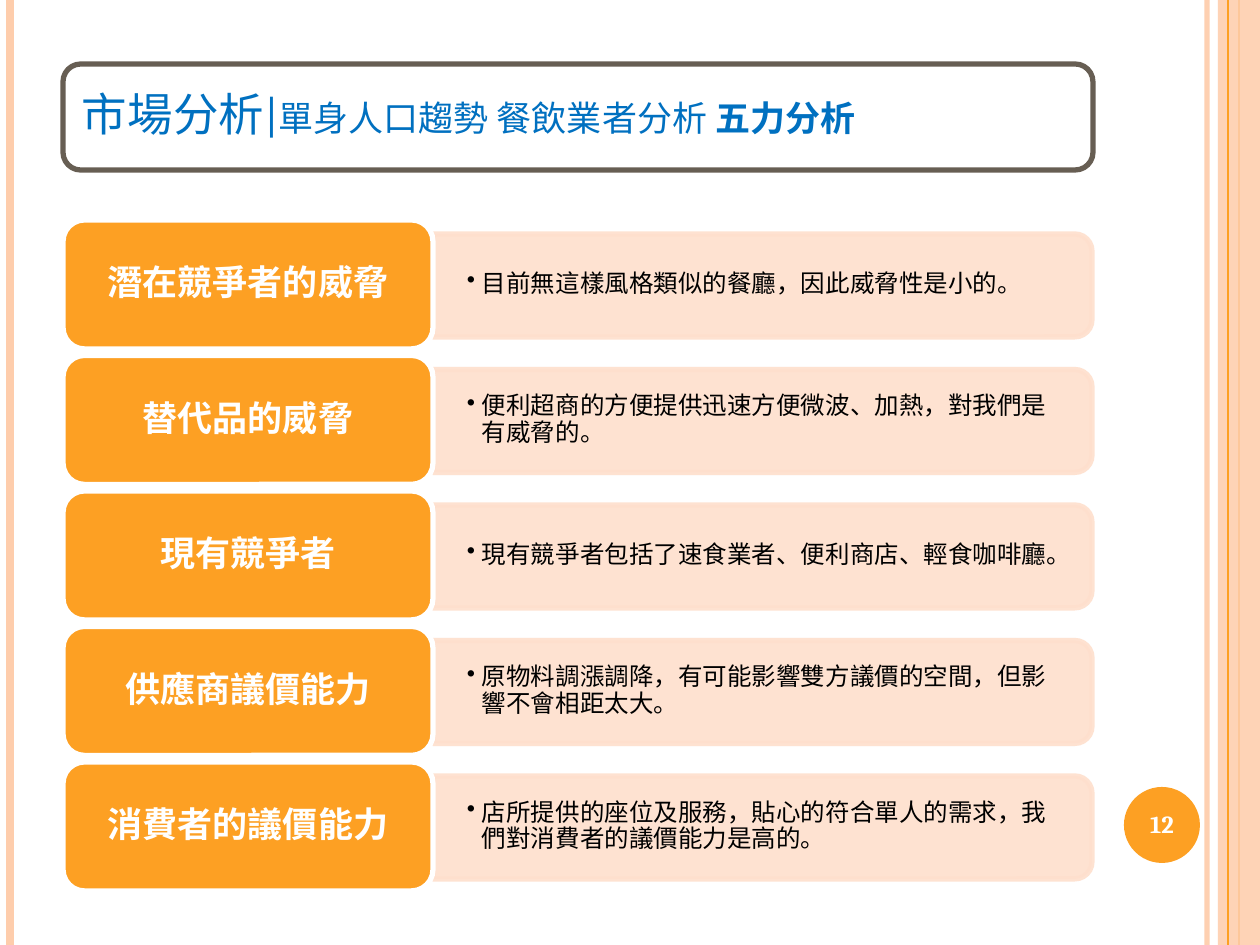
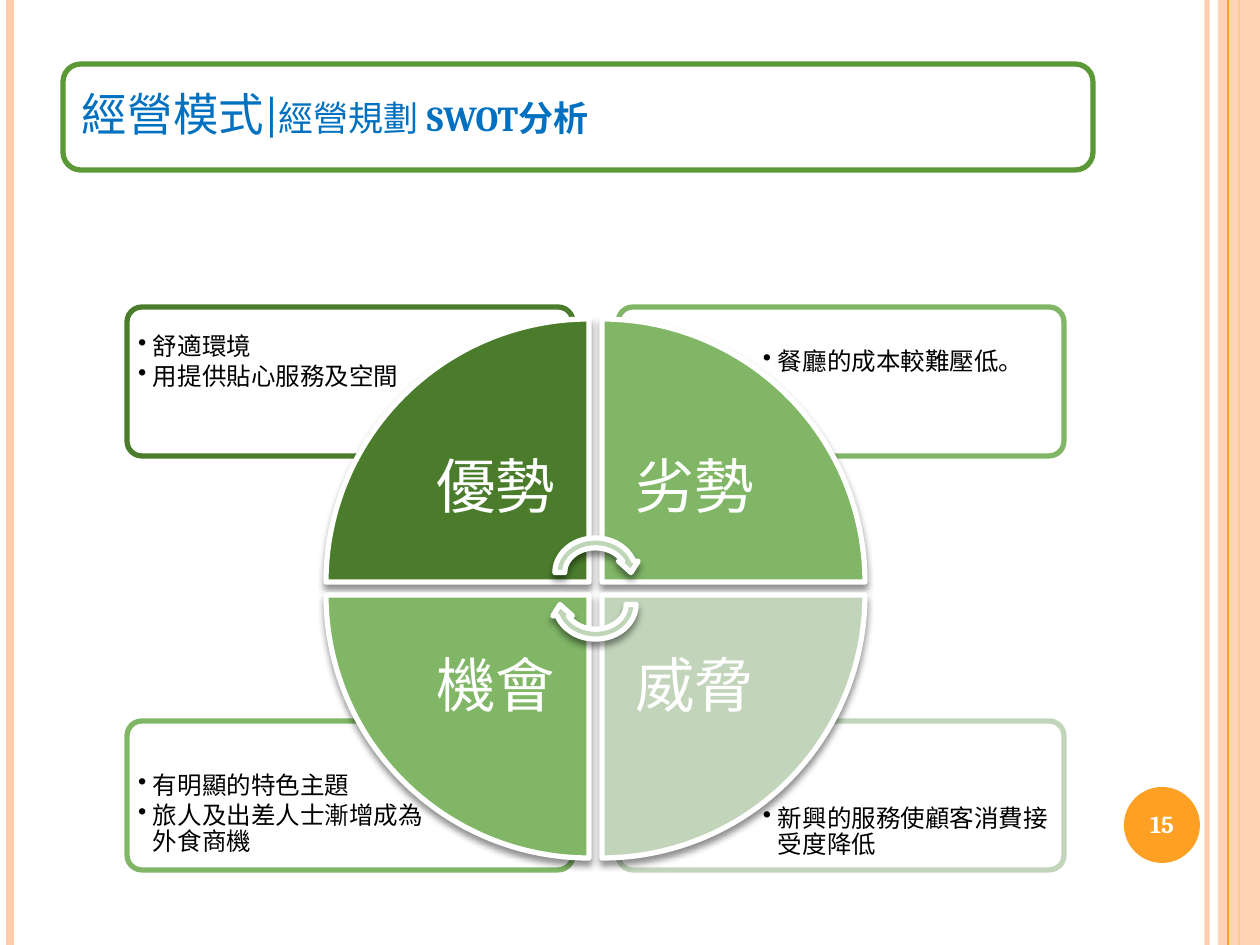
from dataclasses import dataclass
from lxml.etree import SubElement
from pptx import Presentation
from pptx.dml.color import RGBColor
from pptx.enum.shapes import MSO_CONNECTOR, MSO_SHAPE
from pptx.enum.text import MSO_ANCHOR, MSO_AUTO_SIZE, PP_ALIGN
from pptx.oxml.ns import qn
from pptx.util import Pt


@dataclass(frozen=True)
class Theme:
    font: str = "Cambria"
    white: str = "FFFFFF"
    black: str = "000000"
    blue: str = "0070C0"
    orange: str = "FDA023"
    peach: str = "FECDAC"
    pale: str = "FEDFCD"
    brown: str = "675E53"
    leaf: str = "5B9836"
    dark: str = "4A7C2C"
    green: str = "80B666"
    mist: str = "C2D5BB"
    arrow: str = "BFD5B7"
    head: int = 26
    sub: int = 20
    body: int = 14
    label: int = 34
    edge: int = 3


T = Theme()
PX = 914400 / 126
WIDE, HIGH = 1260, 945

FORCES = {
    "page": "12",
    "frame": T.brown,
    "title": [("市場分析|", T.head, False),
              ("單身人口趨勢 餐飲業者分析 ", T.sub, False),
              ("五力分析", T.sub, True)],
    "rows": [
        ("潛在競爭者的威脅", "目前無這樣風格類似的餐廳，因此威脅性是小的。"),
        ("替代品的威脅", "便利超商的方便提供迅速方便微波、加熱，對我們是有威脅的。"),
        ("現有競爭者", "現有競爭者包括了速食業者、便利商店、輕食咖啡廳。"),
        ("供應商議價能力", "原物料調漲調降，有可能影響雙方議價的空間，但影響不會相距太大。"),
        ("消費者的議價能力",
         "店所提供的座位及服務，貼心的符合單人的需求，我們對消費者的議價能力是高的。"),
    ],
}

# Each part: label, colour, column, row, turn, anchor, points
SWOT = {
    "page": "15",
    "frame": T.leaf,
    "title": [("經營模式|", T.head, False),
              ("經營規劃 ", T.sub, False),
              ("SWOT分析", T.sub, True)],
    "parts": [
        ("優勢", T.dark, 0, 0, 0, MSO_ANCHOR.MIDDLE,
         ["舒適環境", "用提供貼心服務及空間"]),
        ("劣勢", T.green, 1, 0, 90, MSO_ANCHOR.MIDDLE, ["餐廳的成本較難壓低。"]),
        ("威脅", T.mist, 1, 1, 180, MSO_ANCHOR.BOTTOM,
         ["新興的服務使顧客消費接受度降低"]),
        ("機會", T.green, 0, 1, 270, MSO_ANCHOR.MIDDLE,
         ["有明顯的特色主題", "旅人及出差人士漸增成為外食商機"]),
    ],
}


def emu(*nums):
    return [round(n * PX) for n in nums]


def paint(fmt, color, alpha=100):
    """Give a fill a solid colour, see-through when alpha is under 100."""
    fmt.solid()
    fmt.fore_color.rgb = RGBColor.from_string(color)
    if alpha < 100:
        tone = fmt._xPr.find(".//" + qn("a:srgbClr"))
        SubElement(tone, qn("a:alpha"), val=str(alpha * 1000))


def shape(slide, kind, at, fill, line=None, alpha=100, fade=100,
          turn=0, round_to=None, shade=False):
    item = slide.shapes.add_shape(kind, *emu(*at))
    item.rotation = turn
    paint(item.fill, fill, alpha)
    if line:
        paint(item.line.fill, line, fade)
        item.line.width = Pt(T.edge)
    else:
        item.line.fill.background()
    if round_to is not None:
        item.adjustments[0] = round_to
    item.shadow.inherit = False
    if shade:
        list_el = item._element.spPr.find(qn("a:effectLst"))
        cast = SubElement(list_el, qn("a:outerShdw"), blurRad=str(Pt(4)),
                          dist=str(Pt(3)), dir="5400000", rotWithShape="0")
        tone = SubElement(cast, qn("a:srgbClr"), val=T.black)
        SubElement(tone, qn("a:alpha"), val="43000")
    return item


def rule(slide, x, color, width, fade=100):
    """Draw a line down the full height of the slide."""
    line = slide.shapes.add_connector(MSO_CONNECTOR.STRAIGHT,
                                      *emu(x, 0, x, HIGH))
    paint(line.line.fill, color, fade)
    line.line.width = Pt(width)
    SubElement(line._element.spPr, qn("a:effectLst"))
    return line


def box(slide, *at):
    return slide.shapes.add_textbox(*emu(*at))


def write(item, paras, size=T.body, color=T.black, bold=False, inset=(0, 0),
          align=PP_ALIGN.LEFT, anchor=MSO_ANCHOR.MIDDLE, bullet=False,
          after=0):
    """Fill a shape; a paragraph is a string or a list of (text, size, bold)."""
    frame = item.text_frame
    frame.auto_size = MSO_AUTO_SIZE.NONE
    frame.word_wrap = True
    frame.vertical_anchor = anchor
    side, end = emu(*inset)
    frame.margin_left = frame.margin_right = side
    frame.margin_top = frame.margin_bottom = end
    for n, runs in enumerate(paras):
        para = frame.add_paragraph() if n else frame.paragraphs[0]
        para.alignment = align
        para.line_spacing = 0.9
        para.space_before = Pt(0)
        para.space_after = Pt(after)
        if bullet:
            props = para._p.get_or_add_pPr()
            hang, = emu(15)
            props.set("marL", str(hang))
            props.set("indent", str(-hang))
            SubElement(props, qn("a:buChar"), char="•")
        if isinstance(runs, str):
            runs = [(runs, size, bold)]
        for words, points, heavy in runs:
            run = para.add_run()
            run.text = words
            run.font.name = T.font
            run.font.size = Pt(points)
            run.font.bold = heavy
            run.font.color.rgb = RGBColor.from_string(color)


def dress(slide, layout):
    """Draw the shared bands on a slide and move them to its layout."""
    bands = [
        rule(slide, 1207, T.peach, 3, 93),
        rule(slide, 10, T.peach, 4.5),
        rule(slide, 1239, T.orange, 1.5),
        shape(slide, MSO_SHAPE.RECTANGLE, (1218, 0, WIDE - 1218, HIGH),
              T.peach, alpha=87),
        rule(slide, 1228, T.orange, 0.75),
        shape(slide, MSO_SHAPE.OVAL, (1124, 787, 76, 76), T.orange),
    ]
    for n, band in enumerate(bands):
        band._element.xpath(".//p:cNvPr")[0].set("id", str(100 + n))
        layout.shapes._spTree.append(band._element)


def start(deck, data):
    """Add a slide with its framed title and page number."""
    slide = deck.slides.add_slide(deck.slide_layouts[5])
    shape(slide, MSO_SHAPE.ROUNDED_RECTANGLE, (63, 64, 1030, 106),
          T.white, data["frame"])
    title = slide.shapes.title
    title.left, title.top, title.width, title.height = emu(68, 69, 1018, 96)
    write(title, [data["title"]], color=T.blue, inset=(14, 14))
    slide.shapes._spTree.append(title._element)
    write(box(slide, 1120, 790, 84, 72), [data["page"]], color=T.white,
          bold=True, align=PP_ALIGN.CENTER)
    return slide


def forces(slide, rows):
    first, last = 220, 762
    step = (last - first) / (len(rows) - 1)
    wide, high = 659, 103
    slip = (wide - high) / 2
    for n, (name, note) in enumerate(rows):
        top = first + n * step
        shape(slide, MSO_SHAPE.ROUND_2_SAME_RECTANGLE,
              (433 + slip, top + 14 - slip, high, wide), T.pale, T.pale,
              alpha=90, fade=90, turn=90)
        write(box(slide, 433, top + 18, 654, 93), [note],
              inset=(34, 18), bullet=True, after=2)
        label = shape(slide, MSO_SHAPE.ROUNDED_RECTANGLE,
                      (63, top, 370, 129), T.orange, T.white)
        write(label, [name], T.sub, T.white, True, (10, 5), PP_ALIGN.CENTER)


def mirror(at, col, row):
    """Reflect a top left part into the given column and row."""
    x, y, wide, high = at
    return (1191 - x - wide if col else x,
            1177 - y - high if row else y, wide, high)


def swot(slide, parts):
    for _, color, col, row, _, anchor, points in reversed(parts):
        shape(slide, MSO_SHAPE.ROUNDED_RECTANGLE,
              mirror((127, 307, 446, 149), col, row), T.white, color,
              alpha=90, round_to=0.1)
        write(box(slide, *mirror((130, 310, 306, 105), col, row)), points,
              inset=(8, 8), anchor=anchor, bullet=True, after=2)
    for name, color, col, row, turn, _, _ in parts:
        shape(slide, MSO_SHAPE.PIE_WEDGE,
              mirror((326, 319, 263, 263), col, row), color, T.white,
              turn=turn, shade=True)
        write(box(slide, *mirror((403, 396, 186, 186), col, row)), [name],
              T.label, T.white, inset=(33, 33), align=PP_ALIGN.CENTER)
    for row in (0, 1):
        shape(slide, MSO_SHAPE.CIRCULAR_ARROW,
              mirror((550, 533, 91, 79), 0, row), T.arrow, T.white,
              turn=180 * row, shade=True)


def main():
    deck = Presentation()
    deck.slide_width, deck.slide_height = emu(WIDE, HIGH)
    slide = start(deck, FORCES)
    dress(slide, slide.slide_layout)
    forces(slide, FORCES["rows"])
    swot(start(deck, SWOT), SWOT["parts"])
    deck.save("out.pptx")


if __name__ == "__main__":
    main()
